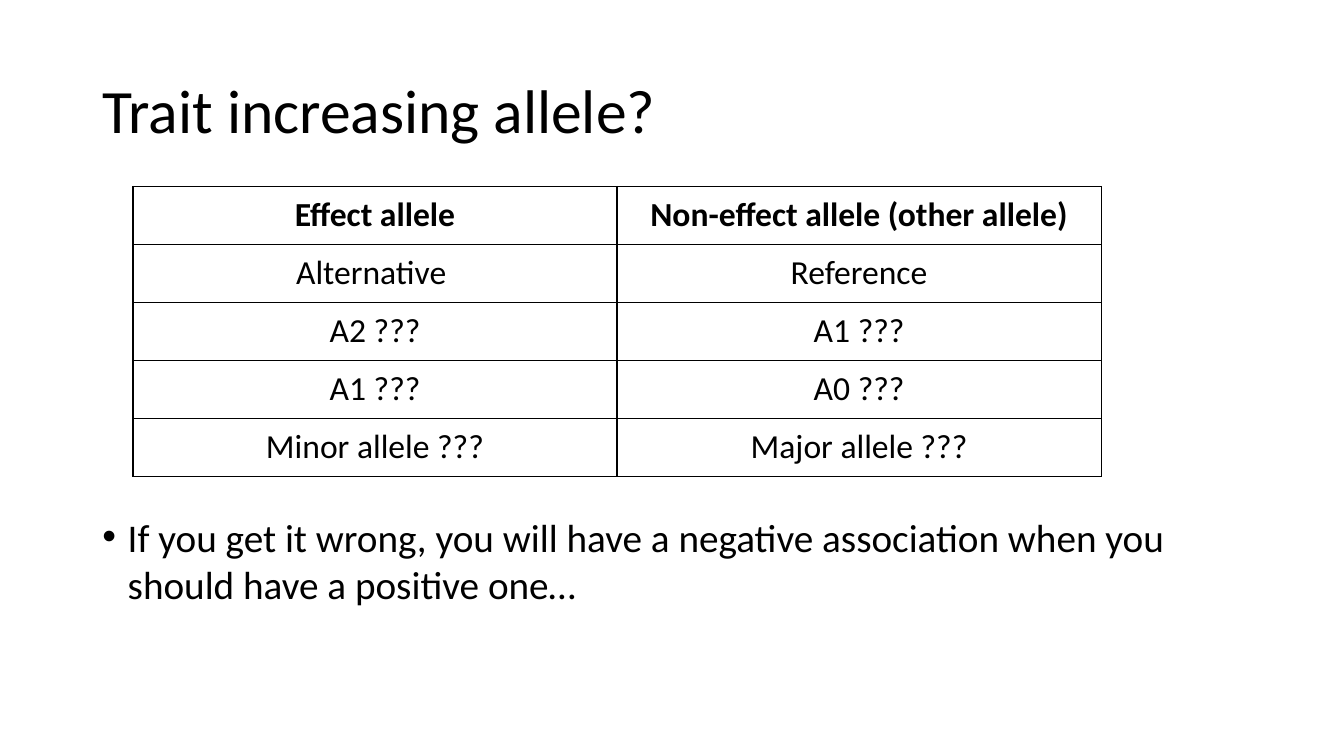
from lxml import etree
from pptx import Presentation
from pptx.dml.color import RGBColor
from pptx.enum.text import MSO_ANCHOR, PP_ALIGN
from pptx.oxml.ns import qn
from pptx.util import Cm, Pt

TITLE = "Trait increasing allele?"
ALLELES = [
    ("Effect allele", "Non-effect allele (other allele)"),
    ("Alternative ", "Reference"),
    ("A2 ???", "A1 ???"),
    ("A1 ???", "A0 ???"),
    ("Minor allele ???", "Major allele ???"),
]
WARNING = ("If you get it wrong, you will have a negative association "
           "when you should have a positive one…")

COLORS = {"ink": "000000", "paper": "FFFFFF"}
FONT = "Calibri"
LEFT, CENTER = PP_ALIGN.LEFT, PP_ALIGN.CENTER
MIDDLE = MSO_ANCHOR.MIDDLE
MARGIN, TEXT_WIDTH = Cm(2.33), Cm(29.21)
COLUMN_WIDTH, ROW_HEIGHT = Cm(12.2), Cm(1.46)
BULLET_INDENT = Cm(0.64)


def add_span(para, text, size, bold=False):
    span = para.add_run()
    span.text = text
    span.font.name = FONT
    span.font.size = Pt(size)
    span.font.bold = bold
    span.font.color.rgb = RGBColor.from_string(COLORS["ink"])


def place(shape, left, top, width, height):
    shape.left, shape.top, shape.width, shape.height = left, top, width, height


def add_borders(cell):
    """Draw a thin line on all four sides; call before the cell is filled."""
    properties = cell._tc.get_or_add_tcPr()
    for side in ("lnL", "lnR", "lnT", "lnB"):
        line = etree.SubElement(properties, qn(f"a:{side}"), w=str(Pt(1)))
        fill = etree.SubElement(line, qn("a:solidFill"))
        etree.SubElement(fill, qn("a:srgbClr"), val=COLORS["ink"])


def add_allele_table(page):
    rows, columns = len(ALLELES), len(ALLELES[0])
    table = page.shapes.add_table(
        rows, columns, Cm(3.35), Cm(4.7),
        COLUMN_WIDTH * columns, ROW_HEIGHT * rows).table
    for column in table.columns:
        column.width = COLUMN_WIDTH
    for row_index, names in enumerate(ALLELES):
        table.rows[row_index].height = ROW_HEIGHT
        for column_index, name in enumerate(names):
            cell = table.cell(row_index, column_index)
            add_borders(cell)
            cell.fill.solid()
            cell.fill.fore_color.rgb = RGBColor.from_string(COLORS["paper"])
            cell.vertical_anchor = MIDDLE
            para = cell.text_frame.paragraphs[0]
            para.alignment = CENTER
            add_span(para, name, 24, bold=row_index == 0)


def add_warning(page):
    box = page.shapes.add_textbox(MARGIN, Cm(12.8), TEXT_WIDTH, Cm(4.3))
    box.text_frame.word_wrap = True
    para = box.text_frame.paragraphs[0]
    properties = para._p.get_or_add_pPr()
    properties.set("marL", str(BULLET_INDENT))
    properties.set("indent", str(-BULLET_INDENT))
    etree.SubElement(properties, qn("a:buFont"), typeface="Arial")
    etree.SubElement(properties, qn("a:buChar"), char="•")
    add_span(para, WARNING, 28)


def main():
    deck = Presentation()
    deck.slide_width, deck.slide_height = Cm(33.87), Cm(19.05)
    page = deck.slides.add_slide(deck.slide_layouts[5])

    title = page.shapes.title
    place(title, MARGIN, Cm(1.01), TEXT_WIDTH, Cm(3.68))
    title.text_frame.vertical_anchor = MIDDLE
    para = title.text_frame.paragraphs[0]
    para.alignment = LEFT
    para.line_spacing = 0.9
    add_span(para, TITLE, 44)

    add_allele_table(page)
    add_warning(page)
    deck.save("out.pptx")


if __name__ == "__main__":
    main()
